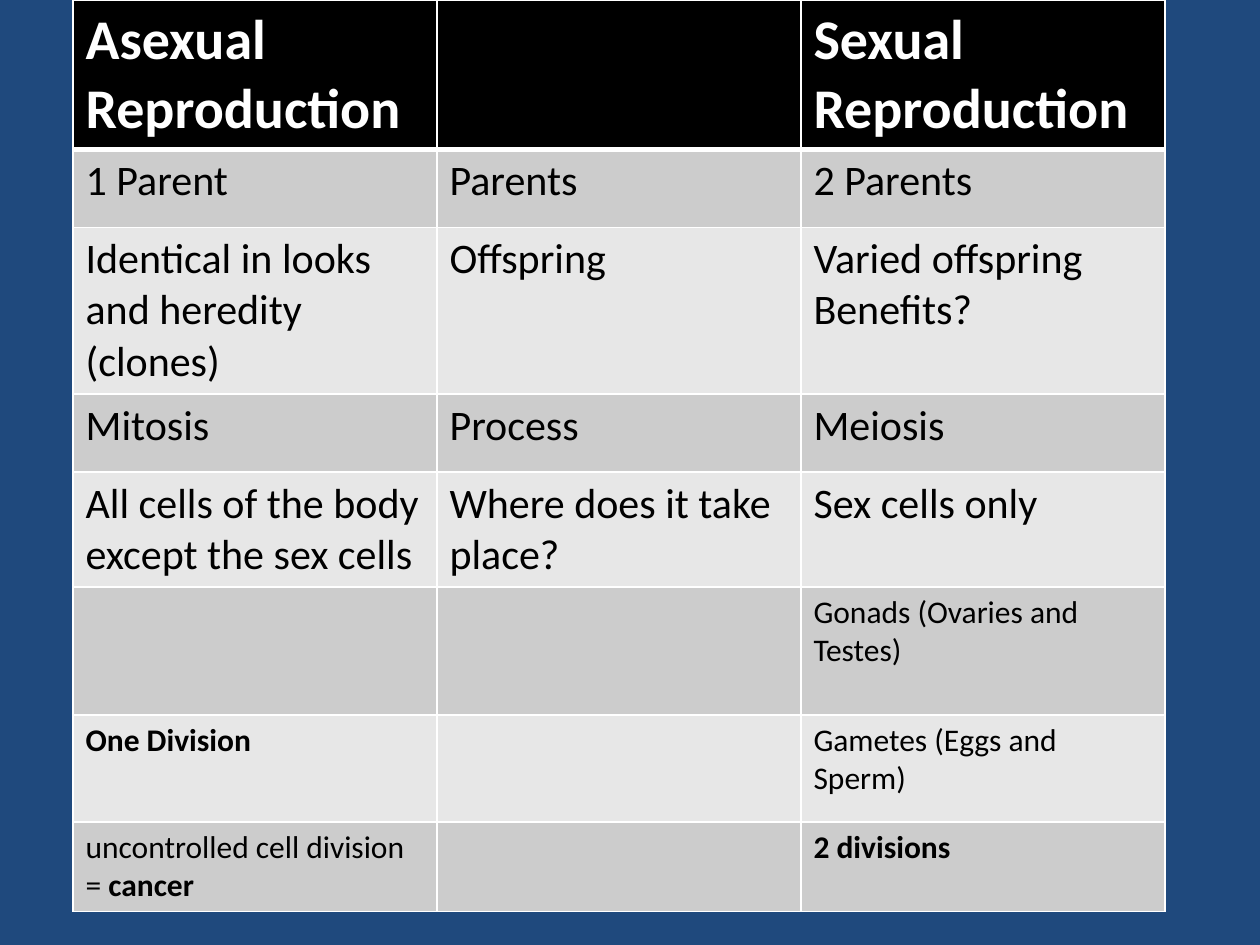
from dataclasses import dataclass

from lxml.etree import SubElement
from pptx import Presentation
from pptx.dml.color import RGBColor
from pptx.oxml.ns import qn
from pptx.util import Emu, Pt


@dataclass(frozen=True)
class Theme:
    back: str = "1F497D"
    head: str = "000000"
    bands: tuple[str, str] = ("CCCCCC", "E7E7E7")
    light: str = "FFFFFF"
    dark: str = "000000"
    face: str = "Calibri"
    big: int = 32
    mid: int = 24
    small: int = 18
    thin: int = 1
    thick: int = 3


@dataclass(frozen=True)
class Run:
    text: str
    bold: bool = False


@dataclass(frozen=True)
class Row:
    """Each cell is a list of paragraphs, each paragraph a list of runs."""
    high: int
    size: int
    cells: list[list[list[Run]]]


THEME = Theme()
SCALE = 914400 / 126
LEFT, TOP, WIDE = 73, 0, 364


def px(count: int) -> Emu:
    return Emu(round(count * SCALE))


def line(text: str, bold: bool = False) -> list[list[Run]]:
    return [[Run(text, bold)]]


ROWS = [
    Row(149, THEME.big, [line("Asexual Reproduction", True), [],
                         line("Sexual Reproduction", True)]),
    Row(78, THEME.mid, [line("1 Parent"), line("Parents"), line("2 Parents")]),
    Row(166, THEME.mid, [line("Identical in looks and heredity (clones)"),
                         line("Offspring"),
                         line("Varied offspring") + line("Benefits?")]),
    Row(78, THEME.mid, [line("Mitosis"), line("Process"), line("Meiosis")]),
    Row(115, THEME.mid, [line("All cells of the body except the sex cells"),
                         line("Where does it take place?"),
                         line("Sex cells only")]),
    Row(128, THEME.small, [[], [], line("Gonads (Ovaries and Testes)")]),
    Row(107, THEME.small, [line("One Division", True), [],
                           line("Gametes (Eggs and Sperm)")]),
    Row(89, THEME.small, [[[Run("uncontrolled cell division = "),
                            Run("cancer", True)]], [],
                          line("2 divisions", True)]),
]


def edge(cell, widths: dict[str, int]) -> None:
    """Draw the cell's borders, given widths in points by side."""
    props = cell._tc.get_or_add_tcPr()
    for side, width in widths.items():
        rule = SubElement(props, qn(f"a:ln{side}"), w=str(Pt(width)))
        fill = SubElement(rule, qn("a:solidFill"))
        SubElement(fill, qn("a:srgbClr"), val=THEME.light)


def write(cell, paras: list[list[Run]], size: int, color: str) -> None:
    frame = cell.text_frame
    for at, runs in enumerate(paras):
        para = frame.add_paragraph() if at else frame.paragraphs[0]
        for item in runs:
            run = para.add_run()
            run.text = item.text
            form = {"name": THEME.face, "size": Pt(size), "bold": item.bold}
            for key, value in form.items():
                setattr(run.font, key, value)
            run.font.color.rgb = RGBColor.from_string(color)


def draw(slide, rows: list[Row]) -> None:
    count = len(rows[0].cells)
    high = sum(row.high for row in rows)
    table = slide.shapes.add_table(len(rows), count, px(LEFT), px(TOP),
                                   px(WIDE * count), px(high)).table
    for col in table.columns:
        col.width = px(WIDE)
    for at, row in enumerate(rows):
        table.rows[at].height = px(row.high)
        shade = THEME.bands[(at - 1) % 2] if at else THEME.head
        color = THEME.dark if at else THEME.light
        sides = {"L": THEME.thin, "R": THEME.thin,
                 "T": THEME.thick if at == 1 else THEME.thin,
                 "B": THEME.thin if at else THEME.thick}
        for cell, paras in zip(table.rows[at].cells, row.cells):
            edge(cell, sides)
            cell.fill.solid()
            cell.fill.fore_color.rgb = RGBColor.from_string(shade)
            write(cell, paras, row.size, color)


def main() -> None:
    deck = Presentation()
    deck.slide_width, deck.slide_height = px(1260), px(945)
    slide = deck.slides.add_slide(deck.slide_layouts[6])
    back = slide.background.fill
    back.solid()
    back.fore_color.rgb = RGBColor.from_string(THEME.back)
    draw(slide, ROWS)
    deck.save("out.pptx")


if __name__ == "__main__":
    main()
